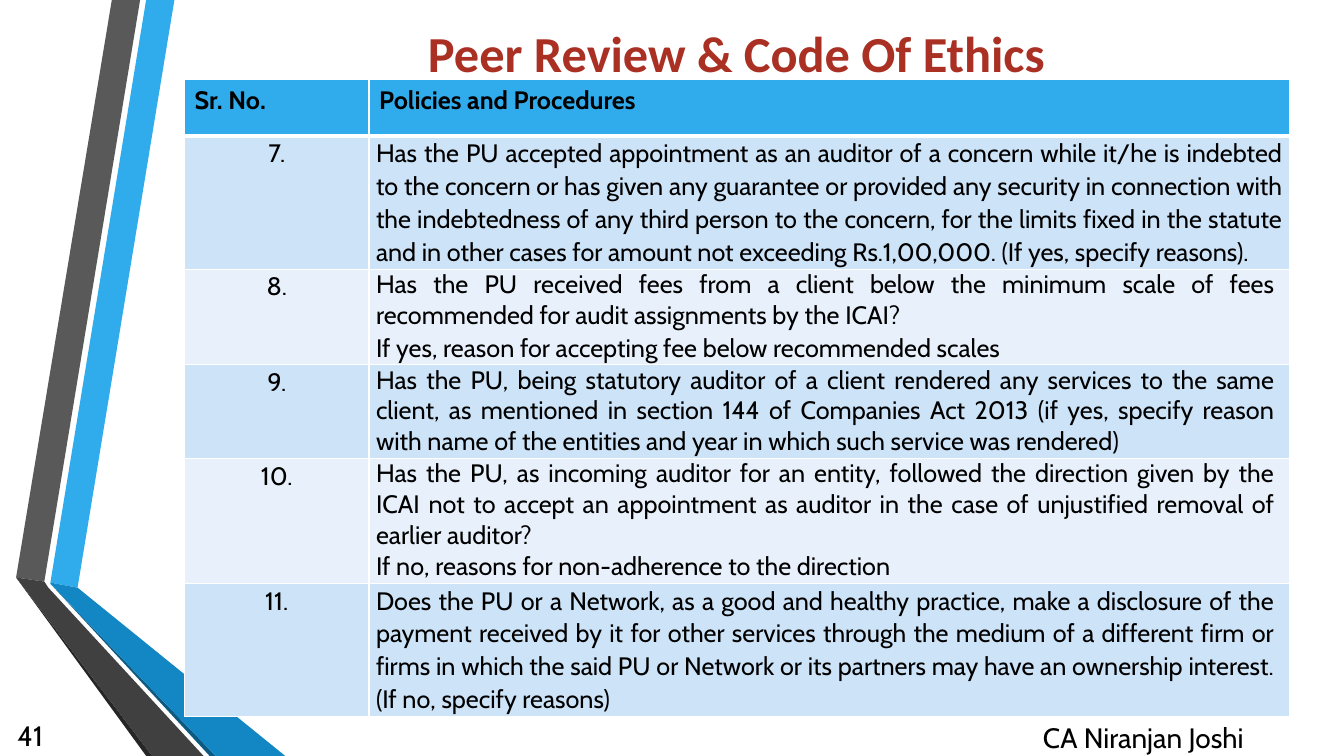
from dataclasses import dataclass

from lxml import etree
from pptx import Presentation
from pptx.dml.color import RGBColor
from pptx.enum.text import MSO_ANCHOR, PP_ALIGN
from pptx.oxml.ns import qn
from pptx.util import Inches, Pt

LEFT, CENTER, JUSTIFY = PP_ALIGN.LEFT, PP_ALIGN.CENTER, PP_ALIGN.JUSTIFY
TOP, MIDDLE = MSO_ANCHOR.TOP, MSO_ANCHOR.MIDDLE
BLANK_LAYOUT = 6


@dataclass(frozen=True)
class Theme:
    """Colours, fonts and type sizes of the slide."""
    title: str = "A93023"
    text: str = "000000"
    border: str = "FFFFFF"
    header: str = "30ACEC"
    odd_row: str = "CDE3F8"
    even_row: str = "E8F1FB"
    title_font: str = "Calibri"
    body_font: str = "Cabin"
    title_size: int = 36
    footer_size: int = 20
    table_size: int = 18


THEME = Theme()

RIBBONS = [
    ("30ACEC", [(0.5, 5.78), (0.77, 5.83), (1.73, 0), (1.45, 0)]),
    ("595959", [(1.39, 0), (1.11, 0), (0.16, 5.73), (0.44, 5.77)]),
    ("262626", [(0.16, 5.73), (1.45, 7.5), (1.51, 7.5)]),
    ("0C5A82", [(0.5, 5.79), (2.08, 7.5), (2.14, 7.5)]),
    ("1287C3", [(0.5, 5.79), (2.14, 7.5), (2.83, 7.5), (0.77, 5.83), (0.5, 5.78)]),
    ("404040", [(2.02, 7.5), (0.48, 5.83), (0.44, 5.77), (0.16, 5.73), (1.51, 7.5)]),
]

HEADINGS = ["Sr. No.", "Policies and Procedures"]
COLUMN_WIDTHS = [1.83, 9.13]
ROW_HEIGHTS = [0.56, 1.32, 0.95, 0.93, 1.24, 1.32]
FIRST_NUMBER = 7
LOOSE, TIGHT = True, False
QUESTIONS = [
    [("Has the PU accepted appointment as an auditor of a concern while it/he is "
      "indebted to the concern or has given any guarantee or provided any security in "
      "connection with the indebtedness of any third person to the concern, for the "
      "limits fixed in the statute and in other cases for amount not exceeding "
      "Rs.1,00,000. (If yes, specify reasons).", LOOSE)],
    [("Has the PU received fees from a client below the minimum scale of fees "
      "recommended for audit assignments by the ICAI?", TIGHT),
     ("If yes, reason for accepting fee below recommended scales", LOOSE)],
    [("Has the PU, being statutory auditor of a client rendered any services to the "
      "same client, as mentioned in section 144 of Companies Act 2013 (if yes, specify "
      "reason with name of the entities and year in which such service was rendered)",
      TIGHT)],
    [("Has the PU, as incoming auditor for an entity, followed the direction given by "
      "the ICAI not to accept an appointment as auditor in the case of unjustified "
      "removal of earlier auditor?", TIGHT),
     ("If no, reasons for non-adherence to the direction", TIGHT)],
    [("Does the PU or a Network, as a good and healthy practice, make a disclosure of "
      "the payment received by it for other services through the medium of a different "
      "firm or firms in which the said PU or Network or its partners may have an "
      "ownership interest. (If no, specify reasons)", LOOSE)],
]


def format_paragraph(para, size, font, color, align, bold=False):
    """Apply alignment and type to a paragraph and its runs."""
    para.alignment = align
    for span in para.runs:
        span.font.size = Pt(size)
        span.font.name = font
        span.font.bold = bold
        span.font.color.rgb = RGBColor.from_string(color)


def add_ribbon(page, color, points):
    """Draw one filled polygon of the folded ribbons."""
    corners = [(Inches(x), Inches(y)) for x, y in points]
    builder = page.shapes.build_freeform(*corners[0])
    builder.add_line_segments(corners[1:], close=True)
    ribbon = builder.convert_to_shape()
    ribbon.shadow.inherit = False
    ribbon.fill.solid()
    ribbon.fill.fore_color.rgb = RGBColor.from_string(color)
    ribbon.line.fill.background()


def add_label(page, place, text, size, font, color, anchor=TOP, bold=False):
    """Add a centred one-line text box."""
    box = page.shapes.add_textbox(*map(Inches, place))
    frame = box.text_frame
    frame.word_wrap = True
    frame.vertical_anchor = anchor
    frame.text = text
    format_paragraph(frame.paragraphs[0], size, font, color, CENTER, bold)


def set_borders(cell, top, bottom):
    """Give a cell white borders with the given top and bottom widths."""
    properties = cell._tc.get_or_add_tcPr()
    for side, width in (("lnL", 1), ("lnR", 1), ("lnT", top), ("lnB", bottom)):
        line = etree.SubElement(properties, qn(f"a:{side}"), w=str(Pt(width)))
        fill = etree.SubElement(line, qn("a:solidFill"))
        etree.SubElement(fill, qn("a:srgbClr"), val=THEME.border)


def fill_cell(cell, paragraphs, fill, align, bold=False, top=1, bottom=1):
    """Write a cell's paragraphs and set its borders and fill."""
    set_borders(cell, top, bottom)
    cell.fill.solid()
    cell.fill.fore_color.rgb = RGBColor.from_string(fill)
    cell.text_frame.text = "\n".join(text for text, _ in paragraphs)
    for para, (_, loose) in zip(cell.text_frame.paragraphs, paragraphs):
        format_paragraph(para, THEME.table_size, THEME.body_font, THEME.text, align, bold)
        if loose:
            para.line_spacing = 1.07
            para.space_after = Pt(8)


def add_questions(page):
    """Add the table of numbered review questions."""
    place = map(Inches, (1.83, 0.79, sum(COLUMN_WIDTHS), sum(ROW_HEIGHTS)))
    table = page.shapes.add_table(len(ROW_HEIGHTS), len(HEADINGS), *place).table
    table.horz_banding = False
    for column, width in zip(table.columns, COLUMN_WIDTHS):
        column.width = Inches(width)
    for row, height in zip(table.rows, ROW_HEIGHTS):
        row.height = Inches(height)
    for column, heading in enumerate(HEADINGS):
        fill_cell(table.cell(0, column), [(heading, TIGHT)], THEME.header, LEFT,
                  bold=True, bottom=3)
    for row, question in enumerate(QUESTIONS, start=1):
        number = [(f"{FIRST_NUMBER + row - 1}.", LOOSE)]
        fill = THEME.odd_row if row % 2 else THEME.even_row
        for column, (content, align) in enumerate([(number, CENTER), (question, JUSTIFY)]):
            cell = table.cell(row, column)
            cell.margin_left = cell.margin_right = Inches(0.07)
            cell.margin_top = cell.margin_bottom = 0
            if align == JUSTIFY and row > 1:
                cell.margin_right = Inches(0.15)
            fill_cell(cell, content, fill, align, top=3 if row == 1 else 1)


def main():
    """Build the slide and save the deck."""
    deck = Presentation()
    deck.slide_width, deck.slide_height = Inches(13.33), Inches(7.5)
    page = deck.slides.add_slide(deck.slide_layouts[BLANK_LAYOUT])
    for color, points in RIBBONS:
        add_ribbon(page, color, points)
    add_label(page, (2.17, 0.17, 10.27, 0.7), "Peer Review & Code Of Ethics",
              THEME.title_size, THEME.title_font, THEME.title, MIDDLE, bold=True)
    add_questions(page)
    footer = (THEME.footer_size, THEME.body_font, THEME.text)
    add_label(page, (0, 7.09, 0.6, 0.4), "41", *footer, anchor=MIDDLE)
    add_label(page, (9.59, 7.1, 3.5, 0.4), "CA Niranjan Joshi", *footer)
    deck.save("out.pptx")


if __name__ == "__main__":
    main()
